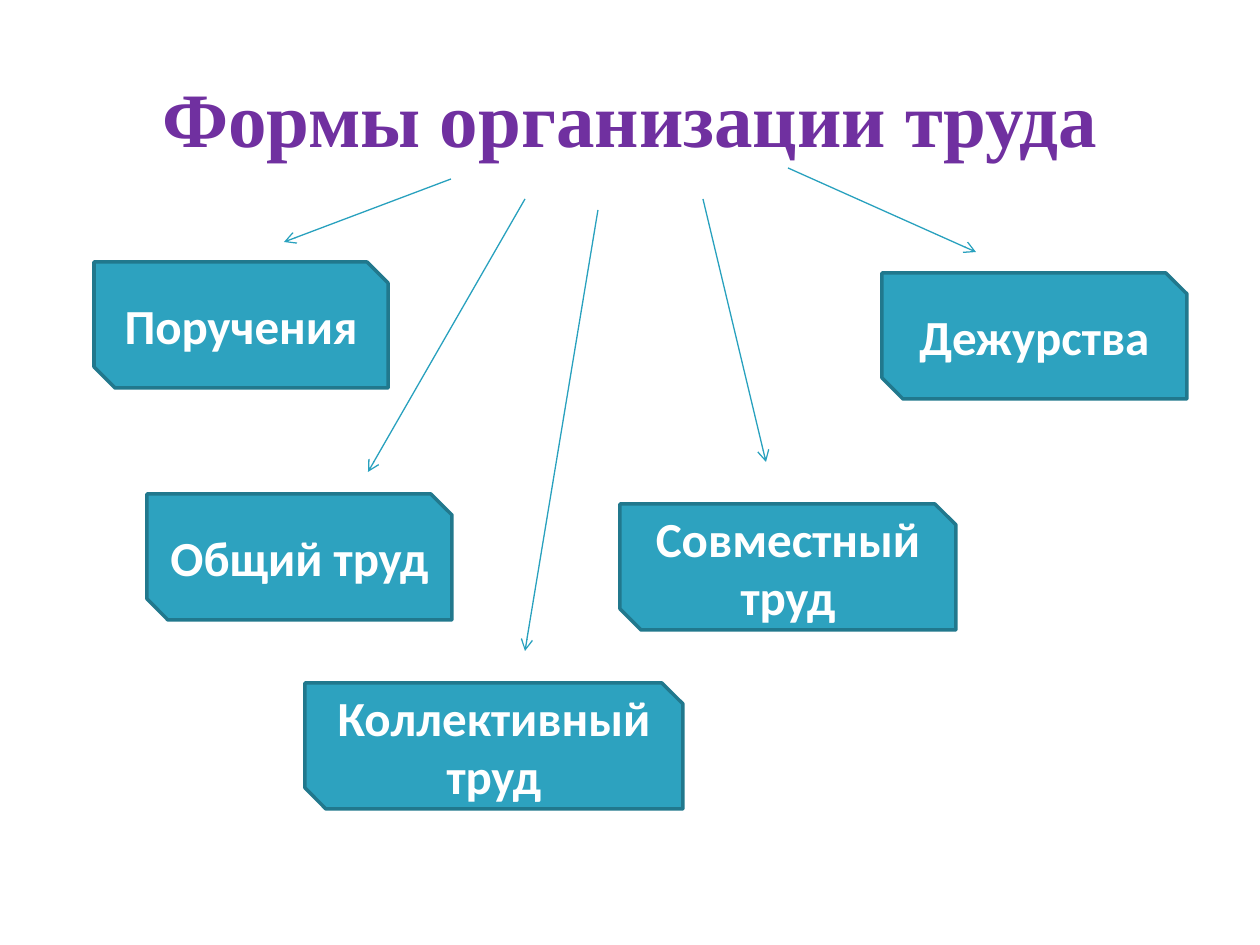
from lxml import etree
from pptx import Presentation, util as u
from pptx.dml.color import RGBColor
from pptx.enum import shapes, text
from pptx.oxml.ns import qn

PX = 914400 / 126


def px(*lengths):
    """Turn pixel lengths into EMU."""
    return [u.Emu(round(n * PX)) for n in lengths]


def write(s, words, font, size, color):
    """Centre bold text in a shape."""
    tf = s.text_frame
    tf.text = words
    tf.word_wrap = True
    tf.vertical_anchor = text.MSO_ANCHOR.MIDDLE
    p = tf.paragraphs[0]
    p.alignment = text.PP_ALIGN.CENTER
    r = p.runs[0]
    r.font.name, r.font.size, r.font.bold = font, u.Pt(size), True
    r.font.color.rgb = RGBColor.from_string(color)


prs = Presentation()
prs.slide_width, prs.slide_height = px(1260, 945)
slide = prs.slides.add_slide(prs.slide_layouts[6])

title = slide.shapes.add_textbox(*px(63, 38, 1134, 157))
write(title, "Формы организации труда", "Times New Roman", 44, "7030A0")

forms = [
    ("Поручения", 94, 262, 294),
    ("Коллективный труд", 305, 683, 378),
    ("Совместный труд", 620, 504, 336),
    ("Дежурства", 882, 273, 305),
    ("Общий труд", 147, 494, 305),
]
for name, left, top, width in forms:
    s = slide.shapes.add_shape(shapes.MSO_SHAPE.SNIP_2_DIAG_RECTANGLE,
                               *px(left, top, width, 126))
    s.shadow.inherit = False
    s.fill.solid()
    s.fill.fore_color.rgb = RGBColor.from_string("2DA2BF")
    s.line.color.rgb = RGBColor.from_string("21788D")
    s.line.width = u.Pt(2)
    write(s, name, "Calibri", 28, "FFFFFF")

arrows = [
    (451, 179, 284, 242),
    (703, 199, 766, 462),
    (788, 168, 976, 252),
    (525, 199, 368, 472),
    (598, 210, 525, 651),
]
for ends in arrows:
    c = slide.shapes.add_connector(shapes.MSO_CONNECTOR.STRAIGHT, *px(*ends))
    c.line.color.rgb = RGBColor.from_string("28A1BE")
    c.line.width = u.Pt(0.75)
    etree.SubElement(c.line._get_or_add_ln(), qn("a:tailEnd"), type="arrow")
    etree.SubElement(c._element.spPr, qn("a:effectLst"))

prs.save("out.pptx")
